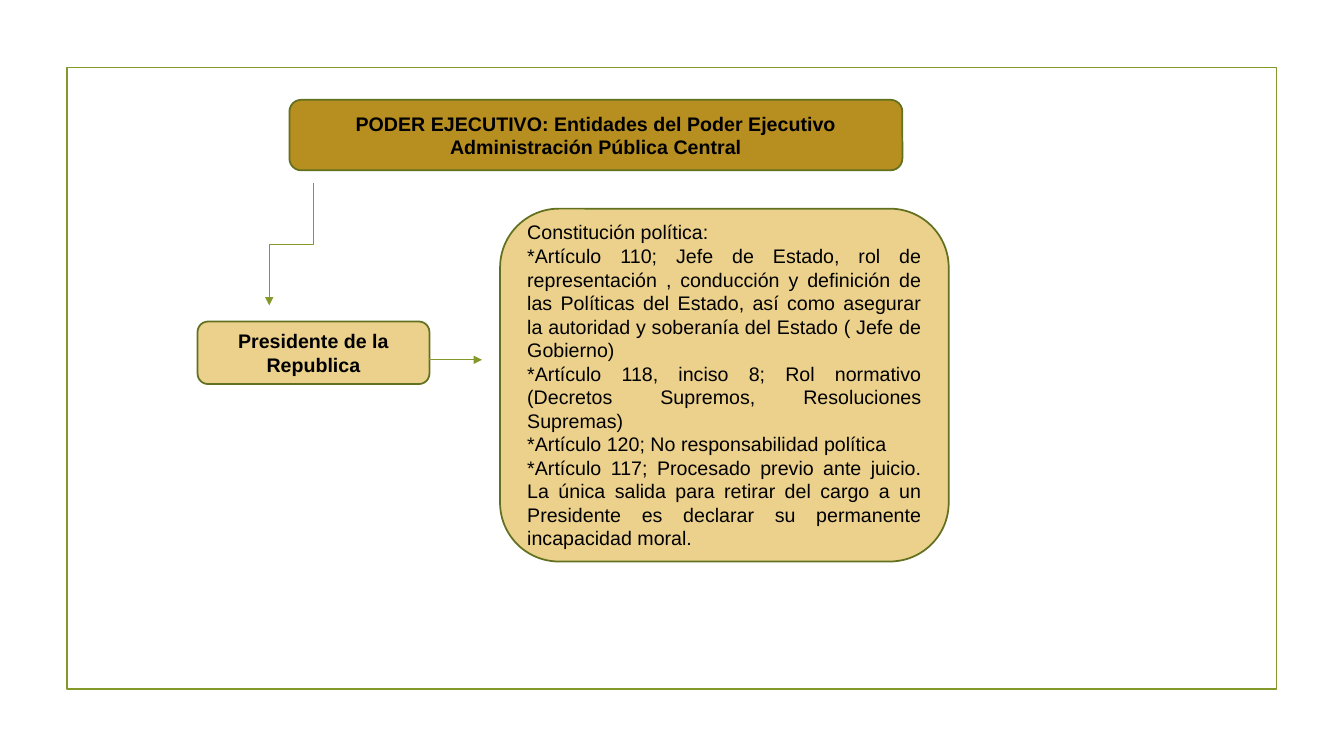
from lxml import etree
from pptx import Presentation, util as u
from pptx.dml.color import RGBColor
from pptx.enum import shapes, text
from pptx.oxml.ns import qn

COLORS = {
    "olive": "83992A",
    "dark_olive": "61711F",
    "gold": "B78E20",
    "sand": "EBD18C",
    "black": "000000",
}
ARTICLES = [
    "Constitución política:",
    "*Artículo 110; Jefe de Estado, rol de representación , conducción y definición "
    "de las Políticas del Estado, así como asegurar la autoridad y soberanía del "
    "Estado ( Jefe de Gobierno)",
    "*Artículo 118, inciso 8; Rol normativo (Decretos Supremos, Resoluciones Supremas)",
    "*Artículo 120; No responsabilidad política",
    "*Artículo 117; Procesado previo ante juicio. La única salida para retirar del "
    "cargo a un Presidente es declarar su permanente incapacidad moral.",
]


class Diagram:
    """Draws on one slide; lengths are percentages of its width and height."""

    font = "Arial"
    size = u.Pt(14)
    border = u.Pt(1.25)
    thin = u.Pt(0.75)

    def __init__(self, prs):
        self.width, self.height = prs.slide_width, prs.slide_height
        self.s = prs.slides.add_slide(prs.slide_layouts[6])

    def x(self, share):
        return round(self.width * share / 100)

    def y(self, share):
        return round(self.height * share / 100)

    def color(self, name):
        return RGBColor.from_string(COLORS[name])

    def shape(self, kind, left, top, width, height, line, fill=None):
        sp = self.s.shapes.add_shape(
            kind, self.x(left), self.y(top), self.x(width), self.y(height))
        sp.shadow.inherit = False
        if fill:
            sp.fill.solid()
            sp.fill.fore_color.rgb = self.color(fill)
        else:
            sp.fill.background()
        sp.line.color.rgb = self.color(line)
        sp.line.width = self.border
        return sp

    def frame(self, *box):
        self.shape(shapes.MSO_SHAPE.RECTANGLE, *box, "olive")

    def box(self, kind, *box, fill, paragraphs, align=text.PP_ALIGN.CENTER, bold=True):
        tf = self.shape(kind, *box, "dark_olive", fill).text_frame
        tf.word_wrap = True
        tf.vertical_anchor = text.MSO_ANCHOR.MIDDLE
        tf.text = "\n".join(paragraphs)
        for p in tf.paragraphs:
            p.alignment = align
            p.font.name, p.font.size, p.font.bold = self.font, self.size, bold
            p.font.color.rgb = self.color("black")

    def connector(self, kind, *ends):
        """Adds an arrow between two points given in slide units."""
        c = self.s.shapes.add_connector(kind, *ends)
        c.line.color.rgb = self.color("olive")
        c.line.width = self.thin
        etree.SubElement(c.line._get_or_add_ln(), qn("a:tailEnd"), type="triangle")
        etree.SubElement(c._element.spPr, qn("a:effectLst"))
        return c

    def arrow_right(self, start, end, y):
        self.connector(shapes.MSO_CONNECTOR.STRAIGHT,
                       self.x(start), self.y(y), self.x(end), self.y(y))

    def elbow_down(self, x1, y1, x2, y2):
        """Bends down, left and down: a horizontal elbow turned by 90 degrees."""
        mid_x, mid_y = self.x((x1 + x2) / 2), self.y((y1 + y2) / 2)
        half_run, half_drop = self.y((y2 - y1) / 2), self.x((x1 - x2) / 2)
        c = self.connector(shapes.MSO_CONNECTOR.ELBOW,
                           mid_x - half_run, mid_y - half_drop,
                           mid_x + half_run, mid_y + half_drop)
        c._element.spPr.find(qn("a:xfrm")).set("rot", str(90 * 60000))


def main():
    prs = Presentation()
    prs.slide_width, prs.slide_height = u.Inches(13.33), u.Inches(7.5)
    d = Diagram(prs)
    rounded = shapes.MSO_SHAPE.ROUNDED_RECTANGLE
    process = shapes.MSO_SHAPE.FLOWCHART_ALTERNATE_PROCESS

    d.frame(4.98, 8.93, 90, 82.27)
    d.box(rounded, 21.53, 13.2, 45.61, 9.33, fill="gold", paragraphs=[
        "PODER EJECUTIVO: Entidades del Poder Ejecutivo Administración Pública Central"])
    d.box(process, 14.7, 42.53, 17.25, 8.27, fill="sand",
          paragraphs=["Presidente de la Republica"])
    d.arrow_right(31.95, 35.86, 47.6)
    d.box(process, 37.21, 27.6, 33.38, 46.67, fill="sand", paragraphs=ARTICLES,
          align=text.PP_ALIGN.JUSTIFY, bold=False)
    d.elbow_down(23.33, 24.27, 20.03, 40.4)
    prs.save("out.pptx")


if __name__ == "__main__":
    main()
